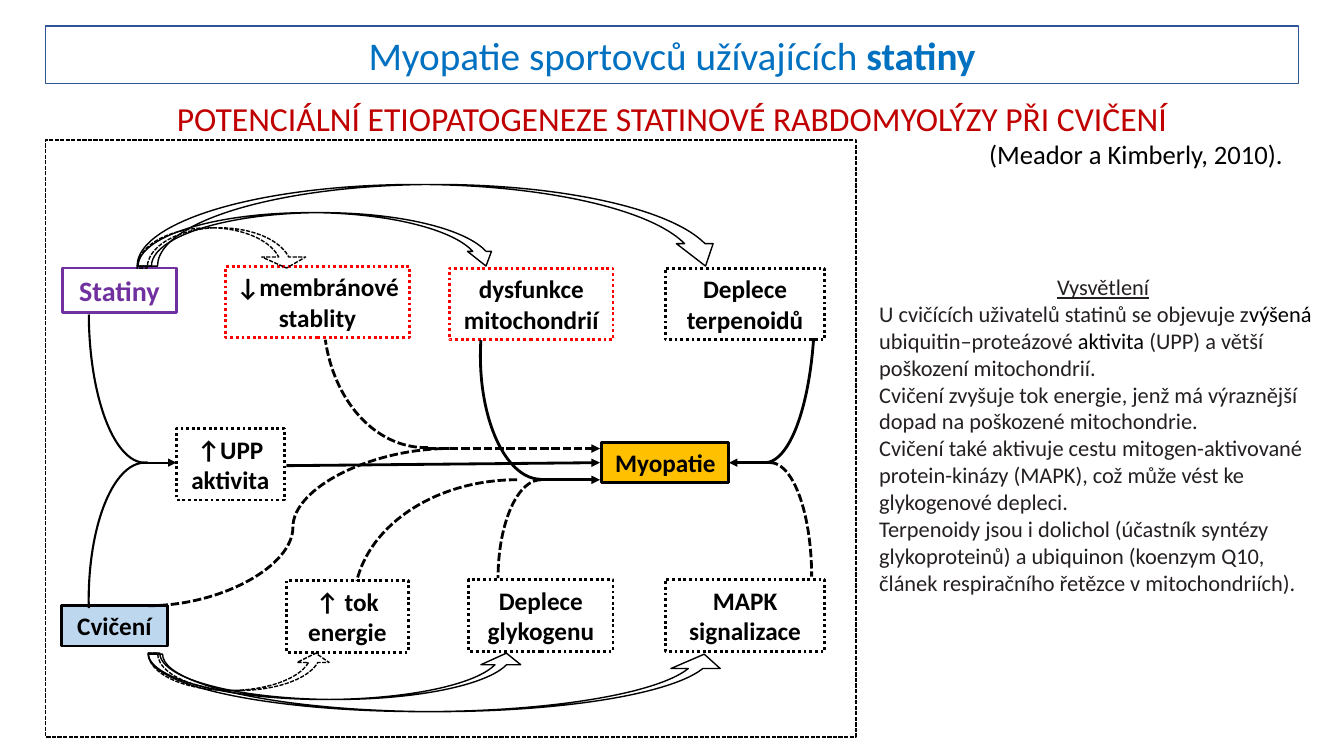
import pptx
import pptx.util
import pptx.dml.color
import pptx.enum.dml
import pptx.enum.shapes
import pptx.enum.text
import pptx.oxml.ns
from lxml import etree

Inches = pptx.util.Inches
Kind = pptx.enum.shapes.MSO_SHAPE
Align = pptx.enum.text.PP_ALIGN
Anchor = pptx.enum.text.MSO_ANCHOR

COLOURS = {
    "black": "000000", "white": "FFFFFF", "red": "FF0000", "purple": "7030A0",
    "amber": "FFC000", "sky": "BDD7EE", "title": "0070C0", "frame": "2F5597",
    "heading": "C00000", "ink": "241F20",
}
DASHES = {
    "dot": pptx.enum.dml.MSO_LINE.ROUND_DOT,
    "dash": pptx.enum.dml.MSO_LINE.SQUARE_DOT,
}

TITLE = [[("Myopatie sportovců užívajících ", {}), ("statiny", {"bold": True})]]
HEADING = "POTENCIÁLNÍ ETIOPATOGENEZE STATINOVÉ RABDOMYOLÝZY PŘI CVIČENÍ"
CITATION = "(Meador a Kimberly, 2010). "
EXPLANATION = [
    [("Vysvětlení", {"underline": True})],
    [("U cvičících uživatelů statinů se objevuje z", {}),
     ("výšená ", {"colour": "black"}), ("ubiquitin–proteázové ", {}),
     ("aktivita", {"colour": "black"}),
     (" (UPP) a větší poškození mitochondrií.", {})],
    [("Cvičení zvyšuje tok energie, jenž má výraznější dopad na poškozené "
      "mitochondrie.", {})],
    [("Cvičení také aktivuje cestu mitogen-aktivované protein-kinázy (MAPK), "
      "což může vést ke glykogenové depleci.", {})],
    [("Terpenoidy jsou i dolichol (účastník syntézy glykoproteinů) a ubiquinon "
      "(koenzym Q10, článek respiračního řetězce v mitochondriích).", {})],
]

DIAGRAM_FRAME = (0.45, 1.39, 8.04, 5.92)
MYOPATHY = (5.97, 4.39, 1.26, 0.4)
# text, place, format of the outline and fill, format of the text
SOLID_BOXES = [
    ("Statiny", (0.62, 2.66, 1.13, 0.44), {"line": "purple", "fill": "white"},
     {"size": 20, "colour": "purple"}),
    ("Cvičení", (0.61, 6.01, 1.05, 0.4), {"fill": "sky"}, {}),
    ("Myopatie", MYOPATHY, {"fill": "amber"}, {}),
]
# text, left, top, width, outline
DOTTED_HEIGHT = 0.71
DOTTED_BOXES = [
    ("↓membránové stablity", 2.24, 2.64, 1.82, "red"),
    ("dysfunkce mitochondrií", 4.46, 2.66, 1.62, "red"),
    ("Deplece terpenoidů", 6.6, 2.66, 1.58, "black"),
    ("↑UPP aktivita", 1.75, 4.25, 1.07, "black"),
    ("↑ tok energie", 2.84, 5.76, 1.21, "black"),
    ("Deplece glykogenu", 4.65, 5.75, 1.43, "black"),
    ("MAPK signalizace", 6.6, 5.75, 1.58, "black"),
]
# kind, place, adjustments, dash
DOWN, UP = Kind.CURVED_DOWN_ARROW, Kind.CURVED_UP_ARROW
BLOCK_ARROWS = [
    (DOWN, (1.36, 2.26, 1.7, 0.4), (0.25, 1.088, 0.275), "dash"),
    (DOWN, (1.37, 2.11, 3.57, 0.53), (0.25, 0.45, 0.275), None),
    (DOWN, (1.36, 1.83, 5.82, 0.81), (0.25, 0.45, 0.275), None),
    (UP, (1.47, 6.48, 1.82, 0.37), (0.25, 0.858, 0.25), "dash"),
    (UP, (1.47, 6.48, 3.75, 0.46), (0.25, 0.858, 0.25), None),
    (UP, (1.47, 6.49, 5.76, 0.57), (0.25, 0.858, 0.25), None),
]
# place, start and end in degrees, rotation, flips, width, dash
ARCS = [
    ((0.88, 1.61, 1.11, 2.98), (268.87, 357.95), 180, "", 1.5, None),
    ((0.88, 4.59, 1.11, 2.72), (268.87, 8.57), 0, "H", 1.5, None),
    ((3.21, 1.83, 2.02, 2.61), (268.87, 346.71), 180, "", 2, "dash"),
    ((4.14, 2.93, 2.45, 1.2), (255.44, 0), 270, "H", 2, None),
    ((3.51, 4.76, 3.23, 2.47), (269.74, 351.67), 0, "H", 2, "dash"),
    ((4.94, 4.76, 0.85, 1.95), (269.74, 0), 0, "H", 2, "dash"),
    ((6.03, 2.54, 3.11, 0.99), (303.36, 359.6), 270, "HV", 2, None),
    ((7.23, 4.59, 0.82, 2.26), (269.74, 0), 0, "", 2, "dash"),
]
# start, end, width, dash
ARROWS = [
    ((1.37, 4.59), (1.75, 4.59), 1.5, None),
    ((2.84, 4.62), (5.95, 4.59), 2, None),
    ((4.24, 4.45), (5.95, 4.45), 2, "dash"),
    ((5.36, 4.76), (5.95, 4.76), 2, None),
    ((7.64, 4.59), (7.23, 4.59), 2, None),
]
EXERCISE_CURVE = ((1.47, 6.01), (4.46, 4.45))
CURVE_BEND = 0.48


def rgb(name):
    return pptx.dml.color.RGBColor.from_string(COLOURS[name])


def add_element(parent, tag, **attributes):
    return etree.SubElement(parent, pptx.oxml.ns.qn(tag), attributes)


def write(para, text, size=18, colour="black", bold=False, underline=False):
    span = para.add_run()
    span.text = text
    font = span.font
    font.name, font.size, font.bold = "Calibri", pptx.util.Pt(size), bold
    font.underline = underline
    font.color.rgb = rgb(colour)


def fill_frame(shape, paras, align=Align.LEFT, anchor=Anchor.TOP, **base):
    """Write paragraphs made of (text, format) spans into a shape."""
    frame = shape.text_frame
    frame.word_wrap = True
    frame.auto_size = pptx.enum.text.MSO_AUTO_SIZE.NONE
    frame.vertical_anchor = anchor
    for index, spans in enumerate(paras):
        para = frame.add_paragraph() if index else frame.paragraphs[0]
        para.alignment = align
        para.space_before = pptx.util.Pt(0)
        for text, extra in spans:
            write(para, text, **{**base, **extra})


def place(shape, spot):
    shape.left, shape.top, shape.width, shape.height = map(Inches, spot)


def set_line(shape, colour="black", width=1, dash=None):
    shape.line.color.rgb = rgb(colour)
    shape.line.width = pptx.util.Pt(width)
    if dash:
        shape.line.dash_style = DASHES[dash]


def add_outline(group, kind, spot, line="black", width=1, dash=None, fill=None):
    shape = group.shapes.add_shape(kind, *map(Inches, spot))
    shape.shadow.inherit = False
    if fill:
        shape.fill.solid()
        shape.fill.fore_color.rgb = rgb(fill)
    else:
        shape.fill.background()
    set_line(shape, line, width, dash)
    return shape


def add_box(group, text, spot, text_format, **outline):
    box = add_outline(group, Kind.RECTANGLE, spot, width=2, **outline)
    fill_frame(box, [[(text, text_format)]], Align.CENTER, Anchor.MIDDLE, bold=True)
    box.text_frame.margin_left = box.text_frame.margin_right = Inches(0.05)


def add_link(group, start, end, width=2, dash=None, curved=False):
    kinds = pptx.enum.shapes.MSO_CONNECTOR
    link = group.shapes.add_connector(kinds.CURVE if curved else kinds.STRAIGHT,
                                      *map(Inches, start + end))
    set_line(link, width=width, dash=dash)
    if not curved:
        add_element(link.line._get_or_add_ln(), "a:tailEnd", type="triangle")
    add_element(link._element.spPr, "a:effectLst")
    return link


def add_diagram(page):
    group = page.shapes.add_group_shape()
    add_outline(group, Kind.RECTANGLE, DIAGRAM_FRAME, dash="dash")
    for text, spot, outline, text_format in SOLID_BOXES:
        add_box(group, text, spot, text_format, **outline)
    for text, left, top, width, colour in DOTTED_BOXES:
        add_box(group, text, (left, top, width, DOTTED_HEIGHT), {},
                line=colour, dash="dot", fill="white")
    for kind, spot, adjustments, dash in BLOCK_ARROWS:
        arrow = add_outline(group, kind, spot, dash=dash)
        for index, value in enumerate(adjustments):
            arrow.adjustments[index] = value
    for spot, angles, rotation, flips, width, dash in ARCS:
        arc = add_outline(group, Kind.ARC, spot, width=width, dash=dash)
        for index, degrees in enumerate(angles):
            arc.adjustments[index] = degrees * 0.6
        arc.rotation = rotation
        for flip in flips:
            arc._element.spPr.xfrm.set("flip" + flip, "1")
    for start, end, width, dash in ARROWS:
        add_link(group, start, end, width, dash)
    curve = add_link(group, *EXERCISE_CURVE, dash="dash", curved=True)
    guides = curve._element.spPr.find(".//" + pptx.oxml.ns.qn("a:avLst"))
    add_element(guides, "a:gd", name="adj1", fmla=f"val {CURVE_BEND * 100000:.0f}")


def main():
    deck = pptx.Presentation()
    deck.slide_width, deck.slide_height = Inches(13.33), Inches(7.5)
    page = deck.slides.add_slide(deck.slide_layouts[1])
    add_diagram(page)

    title = page.shapes.title
    place(title, (0.45, 0.26, 12.43, 0.57))
    set_line(title, "frame")
    fill_frame(title, TITLE, Align.CENTER, Anchor.MIDDLE, size=28, colour="title")

    body = page.placeholders[1]
    place(body, (8.62, 2.66, 4.64, 3.33))
    fill_frame(body, EXPLANATION, size=16, colour="ink")
    body.text_frame.paragraphs[0].alignment = Align.CENTER
    for para in body.text_frame.paragraphs:
        settings = para._p.get_or_add_pPr()
        settings.set("marL", "0")
        settings.set("indent", "0")
        add_element(settings, "a:buNone")

    heading = page.shapes.add_textbox(*map(Inches, (0.45, 0.92, 12.43, 0.82)))
    fill_frame(heading, [[(HEADING, {"size": 24, "colour": "heading"})],
                         [(CITATION, {"size": 19})]], Align.CENTER)
    heading.text_frame.paragraphs[1].alignment = Align.RIGHT
    deck.save("out.pptx")


if __name__ == "__main__":
    main()
